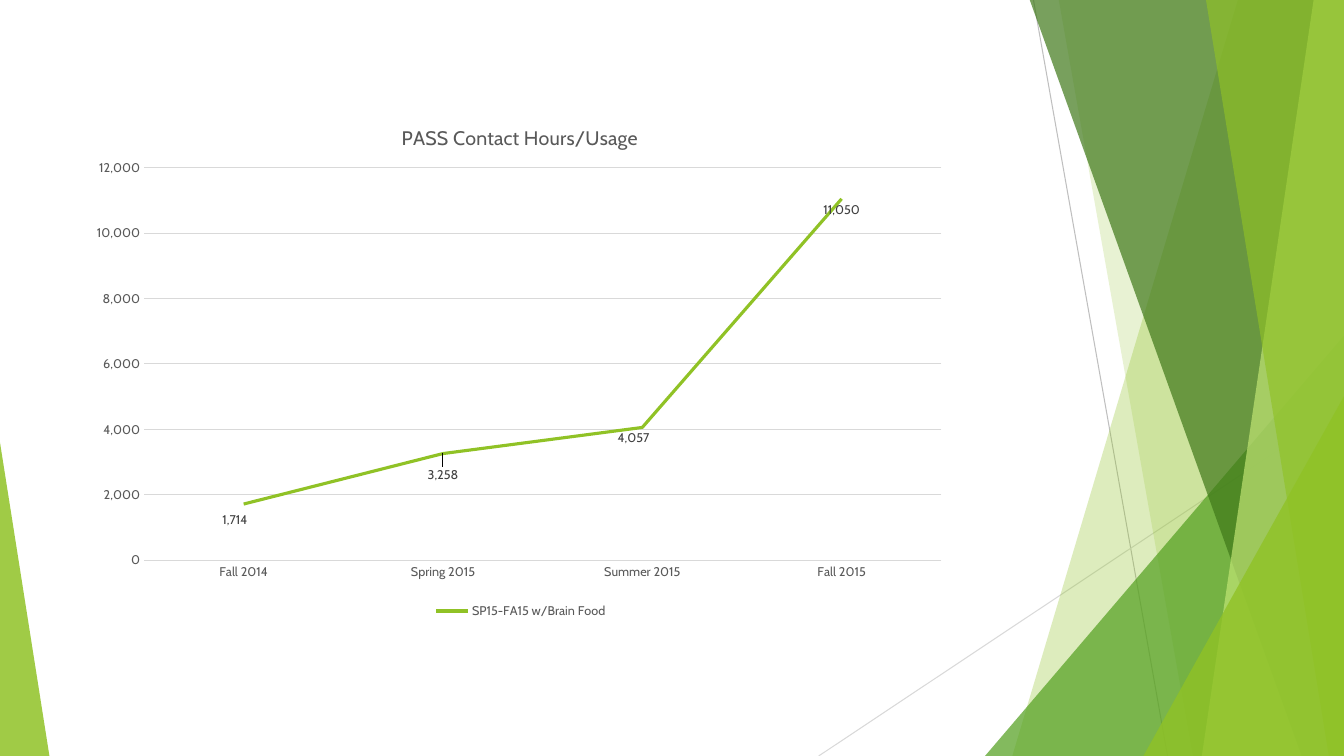
from lxml.etree import SubElement
from pptx import Presentation
from pptx.chart.data import CategoryChartData
from pptx.dml.color import RGBColor
from pptx.enum.chart import XL_CHART_TYPE, XL_LABEL_POSITION, XL_LEGEND_POSITION, XL_TICK_MARK
from pptx.enum.shapes import MSO_CONNECTOR, MSO_SHAPE
from pptx.oxml import parse_xml
from pptx.oxml.ns import qn
from pptx.util import Pt

PX = 9144  # 100 px to the inch
WIDTH, HEIGHT = 1333, 750
FONT = "Cabin"
COLORS = {
    "lime": "90C226", "green": "54A021", "forest": "3F7819", "pale": "C0E474",
    "rule": "D9D9D9", "dark rule": "BFBFBF", "text": "595959", "label": "404040",
}


def fill_translucent(shape, color, opacity):
    shape.shadow.inherit = False
    shape.line.fill.background()
    shape.fill.solid()
    shape.fill.fore_color.rgb = RGBColor.from_string(COLORS[color])
    srgb = shape.fill._xPr.find(".//" + qn("a:srgbClr"))
    SubElement(srgb, qn("a:alpha"), val=str(opacity * 1000))


def set_layout(parent, index, **values):
    """Give a chart part a manual layout, in fractions of the chart, as child number index."""
    old = parent.find(qn("c:layout"))
    if old is not None:
        parent.remove(old)
    settings = "".join(f'<c:{name} val="{value}"/>' for name, value in values.items())
    parent.insert(index, parse_xml(
        '<c:layout xmlns:c="http://schemas.openxmlformats.org/drawingml/2006/chart">'
        f"<c:manualLayout>{settings}</c:manualLayout></c:layout>"))


deck = Presentation()
deck.slide_width, deck.slide_height = WIDTH * PX, HEIGHT * PX
page = deck.slides.add_slide(deck.slide_layouts[6])

# Thin lines behind the facets
for x1, y1, x2, y2, color in [
    (1025, 0, 1158, HEIGHT, "dark rule"),
    (WIDTH, 403, 812, HEIGHT, "rule"),
]:
    line = page.shapes.add_connector(MSO_CONNECTOR.STRAIGHT, x1 * PX, y1 * PX, x2 * PX, y2 * PX)
    line.line.color.rgb = RGBColor.from_string(COLORS[color])
    line.line.width = Pt(0.75)
    SubElement(line._element.spPr, qn("a:effectLst"))

# Facets: bands run from top x to bottom x and reach the right edge;
# triangles stand on the bottom edge with the apex at one side
facets = [
    ("band", 1228, 1004, "lime", 30),
    ("band", 1050, 1183, "lime", 20),
    ("triangle", (977, 333, 356), 1, "green", 72),
    ("band", 1021, 1291, "forest", 70),
    ("band", 1303, 1192, "pale", 70),
    ("band", 1196, 1318, "lime", 65),
    ("triangle", (1134, 393, 199), 1, "lime", 80),
    ("triangle", (0, 439, 49), 0, "lime", 85),
]
for kind, start, end, color, opacity in facets:
    if kind == "band":
        outline = page.shapes.build_freeform(start, -1, scale=PX)
        outline.add_line_segments([(WIDTH, -1), (WIDTH, HEIGHT), (end, HEIGHT)], close=True)
        facet = outline.convert_to_shape()
    else:
        left, top, width = start
        facet = page.shapes.add_shape(MSO_SHAPE.ISOSCELES_TRIANGLE, left * PX, top * PX,
                                      width * PX, (HEIGHT - top) * PX)
        facet.adjustments[0] = end
    fill_translucent(facet, color, opacity)

# Line chart
usage = CategoryChartData(number_format="#,##0")
usage.categories = ["Fall 2014", "Spring 2015", "Summer 2015", "Fall 2015"]
usage.add_series("SP15-FA15 w/Brain Food", [1714, 3258, 4057, 11050])
chart = page.shapes.add_chart(XL_CHART_TYPE.LINE, 82 * PX, 99 * PX, 869 * PX, 519 * PX, usage).chart
chart.font.name = FONT
chart.font.size = Pt(10)
set_layout(chart._chartSpace.chart.plotArea, 0, layoutTarget="inner", xMode="edge", yMode="edge",
           x=0.07, y=0.13, w=0.91, h=0.75)

chart.has_title = True
title = chart.chart_title
title.include_in_layout = False
title.text_frame.text = "PASS Contact Hours/Usage"
title_font = title.text_frame.paragraphs[0].font
title_font.size = Pt(14)
title_font.bold = False
title_font.name = FONT
title_font.color.rgb = RGBColor.from_string(COLORS["text"])
set_layout(title._element, 1, xMode="edge", yMode="edge", x=0.36, y=0.04)

chart.has_legend = True
chart.legend.position = XL_LEGEND_POSITION.BOTTOM
chart.legend.include_in_layout = False

months, hours = chart.category_axis, chart.value_axis
for axis in (months, hours):
    axis.major_tick_mark = axis.minor_tick_mark = XL_TICK_MARK.NONE
months.has_major_gridlines = False
hours.has_major_gridlines = True
hours.minimum_scale, hours.maximum_scale, hours.major_unit = 0, 12000, 2000
hours.tick_labels.number_format = "#,##0"
hours.tick_labels.number_format_is_linked = False
hours.format.line.fill.background()
for rule in (months.format.line, hours.major_gridlines.format.line):
    rule.color.rgb = RGBColor.from_string(COLORS["rule"])
    rule.width = Pt(0.75)

plot = chart.plots[0]
plot.vary_by_categories = False
series = plot.series[0]
series.smooth = False
series.format.line.color.rgb = RGBColor.from_string(COLORS["lime"])
series.format.line.width = Pt(2.25)

label_fonts = []
for index in range(4):
    label = series.points[index].data_label
    label.position = XL_LABEL_POSITION.CENTER
    label_fonts.append(label.font)
labels = series.data_labels
labels.show_value = True
labels.number_format = "#,##0"
labels.number_format_is_linked = False
labels.position = XL_LABEL_POSITION.CENTER
label_fonts.append(labels.font)

shifts = [(-0.01, 0.03), (0, 0.04), (-0.01, 0.02), (0, 0.02)]
for element, (x, y) in zip(series._element.iter(qn("c:dLbl")), shifts):
    set_layout(element, 1, x=x, y=y)

axis_fonts = [months.tick_labels.font, hours.tick_labels.font, chart.legend.font]
for fonts, color in [(axis_fonts, "text"), (label_fonts, "label")]:
    for font in fonts:
        font.name = FONT
        font.size = Pt(9)
        font.color.rgb = RGBColor.from_string(COLORS[color])

deck.save("out.pptx")
